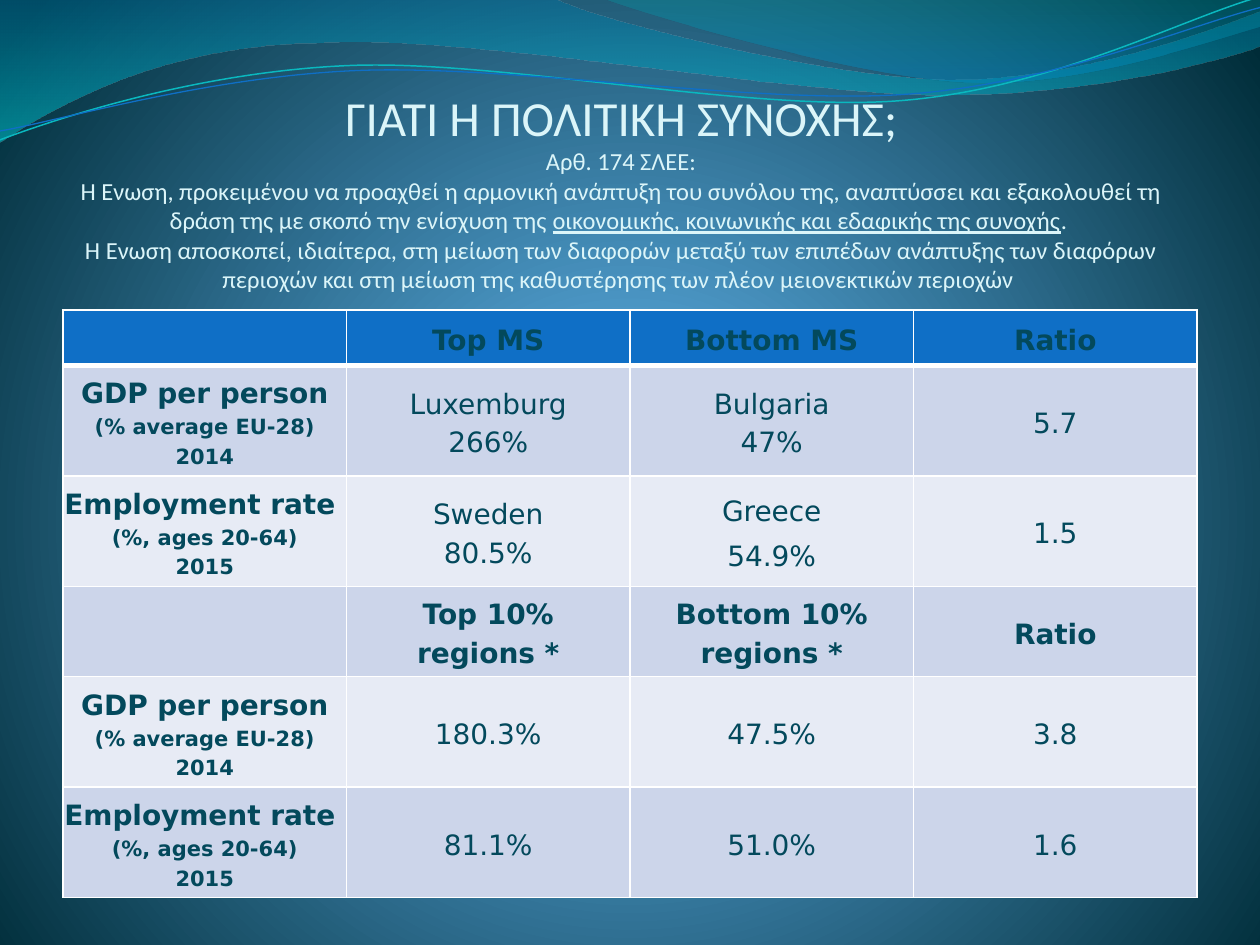
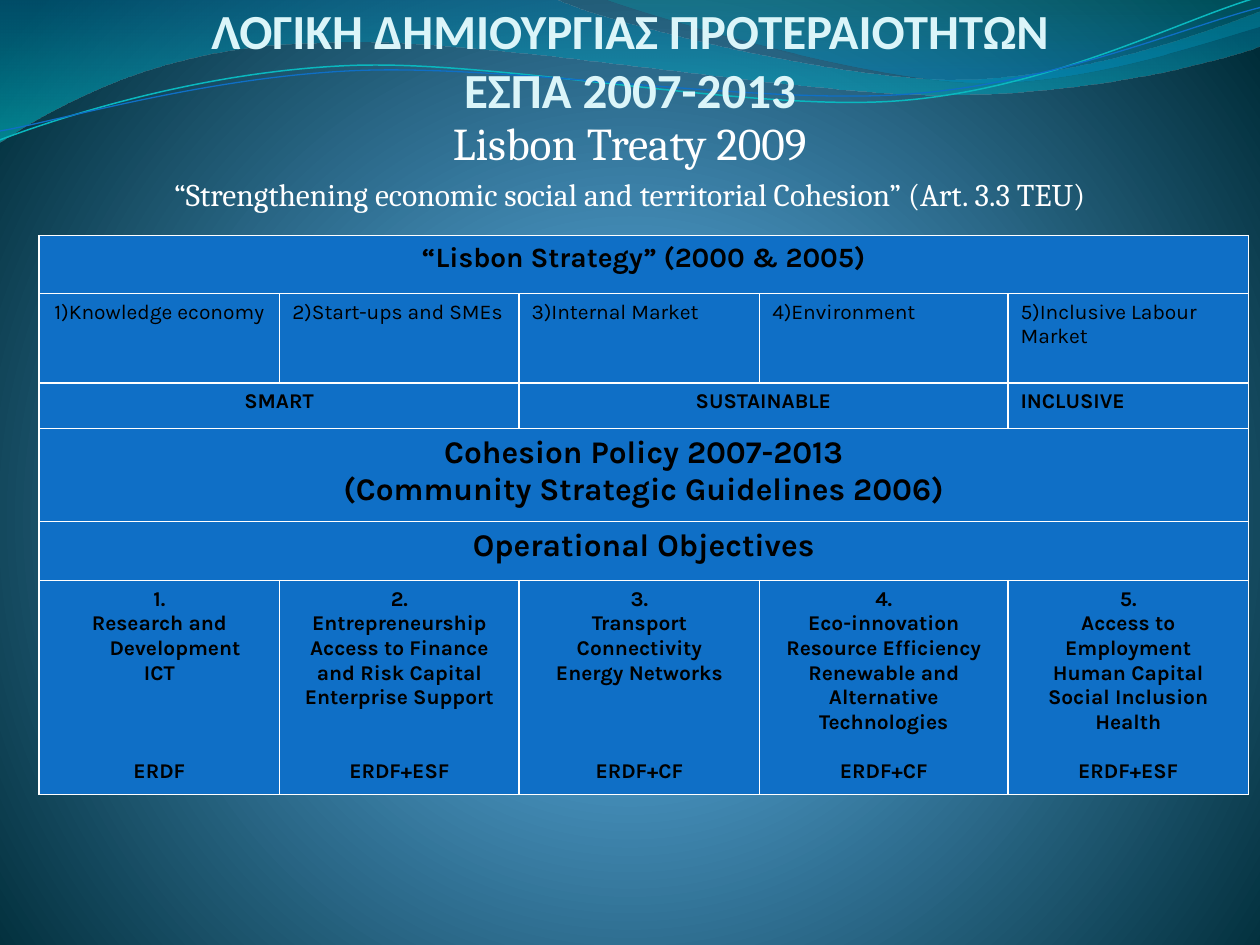
from copy import deepcopy
from dataclasses import dataclass
from math import cos, radians, sin

from lxml.etree import SubElement
from pptx import Presentation
from pptx.dml.color import RGBColor
from pptx.enum.text import MSO_ANCHOR, MSO_AUTO_SIZE, PP_ALIGN
from pptx.oxml import parse_xml
from pptx.oxml.ns import nsdecls, qn
from pptx.util import Inches, Pt


@dataclass(frozen=True)
class Theme:
    title_font: str = "Calibri"
    body_font: str = "Cambria"
    figures_font: str = "DejaVu Sans"
    strategy_font: str = "Karla"
    title: str = "DBF5F9"
    ink: str = "03495C"
    black: str = "000000"
    white: str = "FFFFFF"
    blue: str = "0F6FC6"
    aqua: str = "0AB8BF"
    band_dark: str = "CCD5EA"
    band_light: str = "E7EBF5"
    title_size: int = 28
    lead_size: int = 26
    heading_size: int = 18
    cell_size: int = 16
    intro_size: int = 14
    small_size: int = 12


THEME = Theme()
CENTER, LEFT = PP_ALIGN.CENTER, PP_ALIGN.LEFT

# Stops are (position, colour, opacity), all in percent
BACKGROUND_STOPS = [(0, "4AA0D6", 100), (25, "4C98C7", 100), (100, "002C38", 100)]
BACKGROUND_SHADE = ('<a:path path="circle"><a:fillToRect l="10000" t="110000" '
                    'r="10000" b="100000"/></a:path>')
DOWNWARD_SHADE = '<a:lin ang="5400000" scaled="1"/>'

# Wave outlines in inches: a pair is a straight line, six numbers are a curve
WIDE_WAVE = [(0, -0.01), (4.4, -0.01), (4.76, 0.17, 6.64, 0.63, 7.58, 0.63),
             (8.53, 0.63, 9.58, 0.26, 10, 0.09), (10.01, 0.36),
             (9.83, 0.44, 8.7, 0.76, 7.46, 0.75), (6.22, 0.75, 3.82, 0.28, 2.57, 0.34),
             (1.29, 0.35, 0.46, 0.83, -0.01, 1.13), (0, -0.01)]
RIGHT_WAVE = [(4.79, -0.01), (5.09, 0.11, 6.82, 0.62, 7.69, 0.65),
              (8.56, 0.69, 9.61, 0.32, 10, 0.21), (10, 0), (4.79, -0.01)]
AQUA_LINE = [(0, 1.11), (0.48, 0.93, 1.58, 0.57, 2.77, 0.52),
             (3.95, 0.47, 5.93, 0.89, 7.13, 0.8), (8.33, 0.71, 9.38, 0.15, 9.98, -0.02)]
BLUE_LINE = [(0, 1.04), (0.47, 0.96, 1.64, 0.61, 2.83, 0.56),
             (4.03, 0.51, 5.97, 0.83, 7.17, 0.75), (8.36, 0.67, 9.41, 0.21, 10, 0.06)]
FILLED_WAVES = [(WIDE_WAVE, [(0, "0074A1", 45), (100, "00C6CF", 55)]),
                (RIGHT_WAVE, [(0, "00A1A9", 30), (80, "008BBF", 45)])]
WAVE_LINES = [(AQUA_LINE, THEME.aqua, 0.85), (BLUE_LINE, THEME.blue, 0.75)]
LINE_TILT = -2.7
LINE_CENTER = (4.99, 0.58)

# In texts, \v breaks a line and \n starts a paragraph
INTRO = [[
    ("ΓΙΑΤΙ Η ΠΟΛΙΤΙΚΗ ΣΥΝΟΧΗΣ;\v", {"size": THEME.title_size}),
    ("Αρθ. 174 ΣΛΕΕ:\vΗ Ένωση, προκειμένου να προαχθεί η αρμονική ανάπτυξη του συνόλου "
     "της, αναπτύσσει και εξακολουθεί τη δράση της με σκοπό την ενίσχυση της ", {}),
    ("οικονομικής, κοινωνικής και εδαφικής της συνοχής", {"underline": True}),
    (". \vΗ Ένωση αποσκοπεί, ιδιαίτερα, στη μείωση των διαφορών μεταξύ των επιπέδων "
     "ανάπτυξης των διαφόρων περιοχών και στη μείωση της καθυστέρησης των πλέον "
     "μειονεκτικών περιοχών ", {}),
]]
GDP = ("GDP per person ", "(% average EU-28)", "2014")
EMPLOYMENT = ("Employment rate \v", "(%, ages 20-64)", "2015")
FIGURES = [
    [None, "Top MS", "Bottom MS", "Ratio"],
    [GDP, "Luxemburg\v266%", "Bulgaria\v47%", "5.7"],
    [EMPLOYMENT, "Sweden\n80.5%", "Greece\n54.9%", "1.5"],
    [None, "Top 10% regions *", "Bottom 10% regions *", "Ratio"],
    [GDP, "180.3%", "47.5%", "3.8"],
    [EMPLOYMENT, "81.1%", "51.0%", "1.6"],
]
FIGURE_HEADINGS = (0, 3)
FIGURE_ROWS = [0.44, 0.83, 0.83, 0.67, 0.83, 0.83]
LOOSE_CELL = (2, 2)

# Each row: size, bold, then cells of (columns spanned, alignment, text)
STRATEGY = [
    (THEME.cell_size, True, [(5, CENTER, "“Lisbon Strategy” (2000 & 2005)")]),
    (THEME.small_size, False, [
        (1, CENTER, "1)Knowledge economy"), (1, LEFT, "2)Start-ups and SMEs"),
        (1, LEFT, "3)Internal Market"), (1, LEFT, "4)Environment"),
        (1, LEFT, "5)Inclusive Labour Market")]),
    (THEME.small_size, True, [
        (2, CENTER, "SMART"), (2, CENTER, "SUSTAINABLE"), (1, LEFT, "INCLUSIVE")]),
    (THEME.heading_size, True, [
        (5, CENTER, "Cohesion Policy 2007-2013\n(Community Strategic Guidelines 2006)")]),
    (THEME.heading_size, True, [(5, CENTER, "Operational Objectives")]),
    (THEME.small_size, True, [
        (1, CENTER, "1.\nResearch and Development\nICT\nERDF"),
        (1, CENTER, "2.\nEntrepreneurship\nAccess to Finance and Risk Capital\n"
                    "Enterprise Support\nERDF+ESF"),
        (1, CENTER, "3.\nTransport Connectivity\nEnergy Networks\nERDF+CF"),
        (1, CENTER, "4.\nEco-innovation\nResource Efficiency\n"
                    "Renewable and Alternative Technologies\nERDF+CF"),
        (1, CENTER, "5.\nAccess to Employment\nHuman Capital\nSocial Inclusion\n"
                    "Health\nERDF+ESF")]),
]
STRATEGY_COLUMNS = [1.91, 1.9, 1.91, 1.97, 1.91]
STRATEGY_ROWS = [0.46, 0.71, 0.36, 0.74, 0.47, 1.3]
FUND_GAPS = [3, 2, 3, 1, 1]  # open lines above the fund's name
SMALL_LINE = 14


# Shared helpers
def set_values(target, values):
    for name, value in values.items():
        setattr(target, name, value)


def write_text(frame, paragraphs, font, layout):
    """Fill a frame with paragraphs, each a list of (text, font overrides)."""
    for index, pieces in enumerate(paragraphs):
        paragraph = frame.paragraphs[0] if index == 0 else frame.add_paragraph()
        set_values(paragraph, layout)
        for text, overrides in pieces:
            values = {**font, **overrides}
            color = RGBColor.from_string(values.pop("color"))
            values["size"] = Pt(values["size"])
            for number, line in enumerate(text.split("\v")):
                if number:
                    paragraph.add_line_break()
                    paragraph._p[-1].append(deepcopy(run._r.rPr))
                if line:
                    run = paragraph.add_run()
                    run.text = line
                    run.font.color.rgb = color
                    set_values(run.font, values)


def plain_lines(text):
    return [[(line, {})] for line in text.split("\n")]


def set_gradient(fill, parent, stops, shade):
    fill.solid()
    stop_xml = "".join(
        f'<a:gs pos="{position * 1000}"><a:srgbClr val="{color}">'
        f'<a:alpha val="{opacity * 1000}"/></a:srgbClr></a:gs>'
        for position, color, opacity in stops)
    gradient = parse_xml(f'<a:gradFill {nsdecls("a")} rotWithShape="1">'
                         f'<a:gsLst>{stop_xml}</a:gsLst>{shade}</a:gradFill>')
    parent.replace(parent.find(qn("a:solidFill")), gradient)


def paint_cell(cell, color, bottom=1):
    cell.fill.solid()
    cell.fill.fore_color.rgb = RGBColor.from_string(color)
    properties = cell._tc.get_or_add_tcPr()
    widths = {"a:lnL": 1, "a:lnR": 1, "a:lnT": 1, "a:lnB": bottom}
    for index, (side, width) in enumerate(widths.items()):
        border = SubElement(properties, qn(side), w=str(Pt(width)))
        SubElement(SubElement(border, qn("a:solidFill")), qn("a:srgbClr"), val=THEME.white)
        properties.insert(index, border)


def add_grid(slide, left, top, columns, rows):
    shape = slide.shapes.add_table(len(rows), len(columns), Inches(left), Inches(top),
                                   Inches(sum(columns)), Inches(sum(rows)))
    table = shape.table
    set_values(table, {"first_row": False, "horz_banding": False})
    for column, width in zip(table.columns, columns):
        column.width = Inches(width)
    for row, height in zip(table.rows, rows):
        row.height = Inches(height)
    return table


def place_title(slide, box, paragraphs, font):
    title = slide.shapes.title
    set_values(title, dict(zip(("left", "top", "width", "height"), map(Inches, box))))
    set_values(title.text_frame, {
        "vertical_anchor": MSO_ANCHOR.BOTTOM, "word_wrap": True,
        "auto_size": MSO_AUTO_SIZE.NONE, "margin_left": 0, "margin_right": 0,
        "margin_top": Inches(0.05), "margin_bottom": 0})
    base = {"name": THEME.title_font, "color": THEME.title}
    write_text(title.text_frame, paragraphs, {**base, **font}, {"alignment": CENTER})


# Background and waves
def turn(point, angle):
    """Turn a point about the centre of the wave lines."""
    x, y = (value - middle for value, middle in zip(point, LINE_CENTER))
    c, s = cos(radians(angle)), sin(radians(angle))
    return LINE_CENTER[0] + x * c - y * s, LINE_CENTER[1] + x * s + y * c


def add_outline(slide, outline, tilt=0):
    """Draw an outline, joining each curve's three points into one Bézier."""
    points = [turn(segment[i:i + 2], -tilt)
              for segment in outline for i in range(0, len(segment), 2)]
    points = [(Inches(x), Inches(y)) for x, y in points]
    builder = slide.shapes.build_freeform(*points[0])
    builder.add_line_segments(points[1:], close=not tilt)
    shape = builder.convert_to_shape()
    steps = iter(list(shape._element.iter(qn("a:lnTo"))))
    for segment in outline[1:]:
        step = next(steps)
        if len(segment) == 6:
            curve = parse_xml(f'<a:cubicBezTo {nsdecls("a")}/>')
            step.addprevious(curve)
            for corner in (step, next(steps), next(steps)):
                curve.append(corner[0])
                corner.getparent().remove(corner)
    shape.rotation = tilt
    shape.shadow.inherit = False
    return shape


def decorate_layout(presentation, layout, slide):
    """Give the master its background and move the waves into the layout."""
    master = presentation.slide_master
    fill = master.background.fill
    set_gradient(fill, master._element.find(".//" + qn("p:bgPr")),
                 BACKGROUND_STOPS, BACKGROUND_SHADE)
    for placeholder in list(layout.placeholders):
        if placeholder.placeholder_format.idx:
            placeholder._element.getparent().remove(placeholder._element)
    waves = []
    for outline, stops in FILLED_WAVES:
        wave = add_outline(slide, outline)
        set_gradient(wave.fill, wave._element.spPr, stops, DOWNWARD_SHADE)
        wave.line.fill.background()
        waves.append(wave)
    for outline, color, width in WAVE_LINES:
        line = add_outline(slide, outline, LINE_TILT)
        line.fill.background()
        line.line.color.rgb = RGBColor.from_string(color)
        line.line.width = Pt(width)
        waves.append(line)
    for index, wave in enumerate(waves, start=2):
        layout.shapes._spTree.insert(index, wave._element)


# Slide 1: disparities between states and regions
def add_figures(slide, left, top, width):
    table = add_grid(slide, left, top, [width / 4] * 4, FIGURE_ROWS)
    small = {"size": THEME.small_size}
    for row, texts in enumerate(FIGURES):
        band = THEME.band_dark if row % 2 else THEME.band_light
        for column, text in enumerate(texts):
            cell = table.cell(row, column)
            paint_cell(cell, band if row else THEME.blue, 1 if row else 3)
            cell.vertical_anchor = MSO_ANCHOR.MIDDLE
            if text is None:
                continue
            if column == 0:
                set_values(cell, {"margin_left": 0, "margin_right": 0})
                measure, unit, year = text
                lines = [[(measure, {}), (unit, small)], [(year, small)]]
            else:
                lines = plain_lines(text)
            layout = {"alignment": CENTER, "line_spacing": 1.2}
            if (row, column) == LOOSE_CELL:
                layout["space_before"] = Pt(3)
            font = {"name": THEME.figures_font, "size": THEME.cell_size, "color": THEME.ink,
                    "bold": column == 0 or row in FIGURE_HEADINGS}
            write_text(cell.text_frame, lines, font, layout)


def build_disparities(slide):
    place_title(slide, (0.43, 0.52, 9, 1.81), INTRO, {"size": THEME.intro_size})
    add_figures(slide, 0.5, 2.46, 9)


# Slide 2: from strategy to operational objectives
def add_treaty(slide, left, top, width, height):
    box = slide.shapes.add_textbox(*map(Inches, (left, top, width, height)))
    box.text_frame.word_wrap = True
    lines = [[("Lisbon Treaty 2009", {"size": THEME.lead_size})],
             [("“Strengthening economic social and territorial Cohesion” (Art. 3.3 TEU)", {})]]
    font = {"name": THEME.body_font, "size": THEME.heading_size, "color": THEME.white}
    write_text(box.text_frame, lines, font, {"alignment": CENTER, "space_before": Pt(3.6)})


def add_strategy(slide, left, top):
    table = add_grid(slide, left, top, STRATEGY_COLUMNS, STRATEGY_ROWS)
    for row, (size, bold, entries) in enumerate(STRATEGY):
        for column in range(len(STRATEGY_COLUMNS)):
            paint_cell(table.cell(row, column), THEME.blue)
        column = 0
        for span, alignment, text in entries:
            cell = table.cell(row, column)
            if span > 1:
                cell.merge(table.cell(row, column + span - 1))
            font = {"name": THEME.strategy_font, "size": size, "color": THEME.black,
                    "bold": bold}
            write_text(cell.text_frame, plain_lines(text), font, {"alignment": alignment})
            column += span
    last_row = len(STRATEGY) - 1
    for column, gap in enumerate(FUND_GAPS):
        paragraphs = table.cell(last_row, column).text_frame.paragraphs
        paragraphs[-1].space_before = Pt(gap * SMALL_LINE)
    # Hanging indent of the first objective
    for paragraph in table.cell(last_row, 0).text_frame.paragraphs:
        properties = paragraph._p.get_or_add_pPr()
        properties.set("marL", str(Inches(0.25)))
        properties.set("indent", str(Inches(-0.25)))


def build_priorities(slide):
    title = plain_lines("ΛΟΓΙΚΗ ΔΗΜΙΟΥΡΓΙΑΣ ΠΡΟΤΕΡΑΙΟΤΗΤΩΝ\vΕΣΠΑ 2007-2013")
    place_title(slide, (0.5, 0, 9, 0.94), title, {"size": THEME.title_size, "bold": True})
    add_treaty(slide, 0.5, 0.86, 9, 6.41)
    add_strategy(slide, 0.31, 1.87)


def main():
    presentation = Presentation()
    set_values(presentation, {"slide_width": Inches(10), "slide_height": Inches(7.5)})
    layout = presentation.slide_layouts[5]
    slides = [presentation.slides.add_slide(layout) for _ in range(2)]
    decorate_layout(presentation, layout, slides[0])
    build_disparities(slides[0])
    build_priorities(slides[1])
    presentation.save("out.pptx")


if __name__ == "__main__":
    main()
